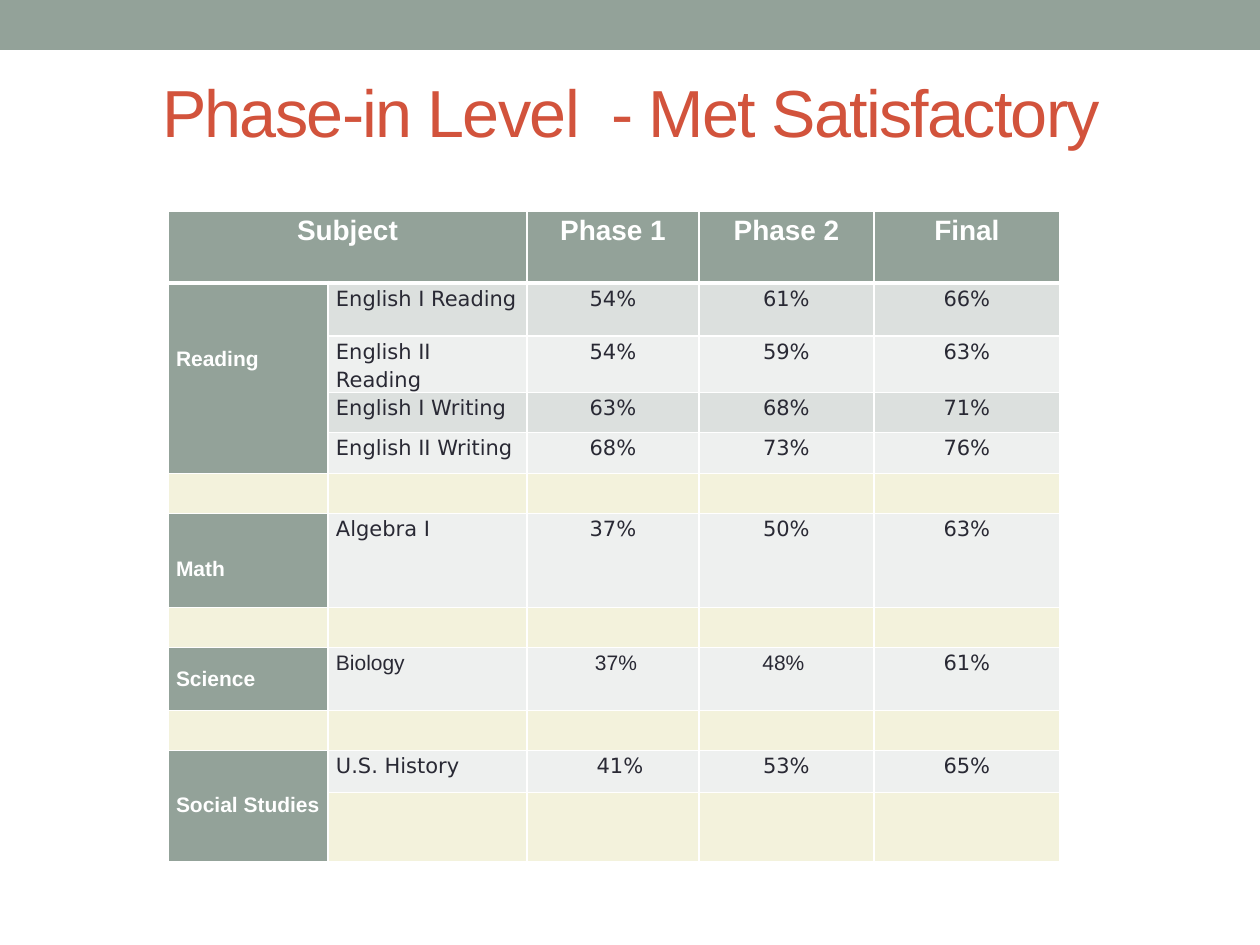
"""Build the slide that tabulates the satisfactory scores of each phase."""
from dataclasses import dataclass

from lxml.etree import SubElement
from pptx import Presentation
from pptx.dml.color import RGBColor
from pptx.enum.shapes import MSO_SHAPE
from pptx.enum.text import MSO_ANCHOR, PP_ALIGN
from pptx.oxml.ns import qn
from pptx.table import Table, _Cell
from pptx.text.text import TextFrame
from pptx.util import Emu, Pt

PIXELS_PER_INCH = 126
COLORS = {
    "sage": "93A299",
    "brick": "D2533C",
    "ink": "292934",
    "white": "FFFFFF",
    "dark_band": "DCE0DE",
    "light_band": "EEF0EF",
    "cream": "F3F2DC",
}
HEADINGS = ["Subject", "", "Phase 1", "Phase 2", "Final"]
COLUMN_WIDTHS = [160, 199, 172, 175, 186]
HEADER_HEIGHT = 72
CELL_INSET = 8


@dataclass(frozen=True)
class Row:
    height: int
    fill: str = "cream"
    texts: tuple[str, ...] = ("", "", "", "")
    arial_columns: tuple[int, ...] = ()


@dataclass(frozen=True)
class Group:
    name: str
    first_row: int
    last_row: int
    top_inset: int


@dataclass(frozen=True)
class Nudge:
    row: int
    column: int
    left: int = 0
    right: int = 0


ROWS = [
    Row(53, "dark_band", ("English I Reading", "54%", "61%", "66%")),
    Row(56, "light_band", ("English II Reading", "54%", "59%", "63%")),
    Row(40, "dark_band", ("English I Writing", "63%", "68%", "71%")),
    Row(41, "light_band", ("English II Writing", "68%", "73%", "76%")),
    Row(40),
    Row(94, "light_band", ("Algebra I", "37%", "50%", "63%")),
    Row(40),
    Row(63, "light_band", ("Biology", "37%", "48%", "61%"), (1, 2, 3)),
    Row(40),
    Row(42, "light_band", ("U.S. History", "41%", "53%", "65%")),
    Row(69),
]
GROUPS = [
    Group("Reading", 1, 4, 61),
    Group("Math", 6, 6, 40),
    Group("Science", 8, 8, 17),
    Group("Social Studies", 10, 11, 40),
]
NUDGES = [Nudge(8, 2, left=6), Nudge(8, 3, right=6), Nudge(10, 2, left=14)]


def px(length: int) -> Emu:
    return Emu(round(length * 914400 / PIXELS_PER_INCH))


def rgb(name: str) -> RGBColor:
    return RGBColor.from_string(COLORS[name])


def write_text(frame: TextFrame, text: str, *, size: int = 12, font: str = "Arial",
               color: str = "ink", bold: bool = False, align: PP_ALIGN = PP_ALIGN.LEFT,
               line_spacing: float = 1.15, tracking: int = 0) -> None:
    para = frame.paragraphs[0]
    para.alignment = align
    para.line_spacing = line_spacing
    span = para.add_run()
    span.text = text
    span.font.size = Pt(size)
    span.font.name = font
    span.font.bold = bold
    span.font.color.rgb = rgb(color)
    if tracking:
        span.font._element.set("spc", str(tracking * 100))


def style_cell(cell: _Cell, fill: str, bottom_width: int = 1, top_width: int = 1) -> None:
    cell.margin_left = cell.margin_right = px(CELL_INSET)
    cell.margin_top = cell.margin_bottom = 0
    cell.vertical_anchor = MSO_ANCHOR.TOP
    properties = cell._tc.get_or_add_tcPr()
    widths = {"lnL": 1, "lnR": 1, "lnT": top_width, "lnB": bottom_width}
    for side, width in widths.items():
        border = SubElement(properties, qn(f"a:{side}"), w=str(Pt(width)))
        paint = SubElement(border, qn("a:solidFill"))
        SubElement(paint, qn("a:srgbClr"), val=COLORS["white"])
    cell.fill.solid()
    cell.fill.fore_color.rgb = rgb(fill)


def fill_header(table: Table) -> None:
    table.rows[0].height = px(HEADER_HEIGHT)
    for column, heading in enumerate(HEADINGS):
        cell = table.cell(0, column)
        style_cell(cell, "sage", bottom_width=3)
        if heading:
            write_text(cell.text_frame, heading, size=16, color="white", bold=True,
                       align=PP_ALIGN.CENTER)
    table.cell(0, 0).merge(table.cell(0, 1))


def fill_row(table: Table, index: int, row: Row) -> None:
    table.rows[index].height = px(row.height)
    top_width = 3 if index == 1 else 1
    style_cell(table.cell(index, 0), row.fill, top_width=top_width)
    for column, text in enumerate(row.texts, start=1):
        cell = table.cell(index, column)
        style_cell(cell, row.fill, top_width=top_width)
        if text:
            write_text(cell.text_frame, text,
                       font="Arial" if column in row.arial_columns else "DejaVu Sans",
                       align=PP_ALIGN.LEFT if column == 1 else PP_ALIGN.CENTER)


def fill_group(table: Table, group: Group) -> None:
    cell = table.cell(group.first_row, 0)
    if group.last_row > group.first_row:
        cell.merge(table.cell(group.last_row, 0))
    cell.fill.fore_color.rgb = rgb("sage")
    cell.margin_top = px(group.top_inset)
    write_text(cell.text_frame, group.name, color="white", bold=True)


def main() -> None:
    deck = Presentation()
    deck.slide_width, deck.slide_height = px(1260), px(945)
    page = deck.slides.add_slide(deck.slide_layouts[5])

    band = page.shapes.add_shape(MSO_SHAPE.RECTANGLE, 0, 0, px(1260), px(50))
    band.shadow.inherit = False
    band.fill.solid()
    band.fill.fore_color.rgb = rgb("sage")
    band.line.fill.background()

    title = page.shapes.title
    title.left, title.top, title.width, title.height = px(147), px(32), px(968), px(158)
    title.text_frame.vertical_anchor = MSO_ANCHOR.MIDDLE
    write_text(title.text_frame, "Phase-in Level  - Met Satisfactory", size=38,
               color="brick", align=PP_ALIGN.CENTER, line_spacing=1.0, tracking=-1)

    height = HEADER_HEIGHT + sum(row.height for row in ROWS)
    table = page.shapes.add_table(len(ROWS) + 1, len(HEADINGS), px(168), px(211),
                                  px(sum(COLUMN_WIDTHS)), px(height)).table
    table.first_row = table.horz_banding = False
    for column, width in zip(table.columns, COLUMN_WIDTHS):
        column.width = px(width)
    fill_header(table)
    for index, row in enumerate(ROWS, start=1):
        fill_row(table, index, row)
    for group in GROUPS:
        fill_group(table, group)
    for nudge in NUDGES:
        cell = table.cell(nudge.row, nudge.column)
        cell.margin_left = px(CELL_INSET + nudge.left)
        cell.margin_right = px(CELL_INSET + nudge.right)

    deck.save("out.pptx")


if __name__ == "__main__":
    main()
